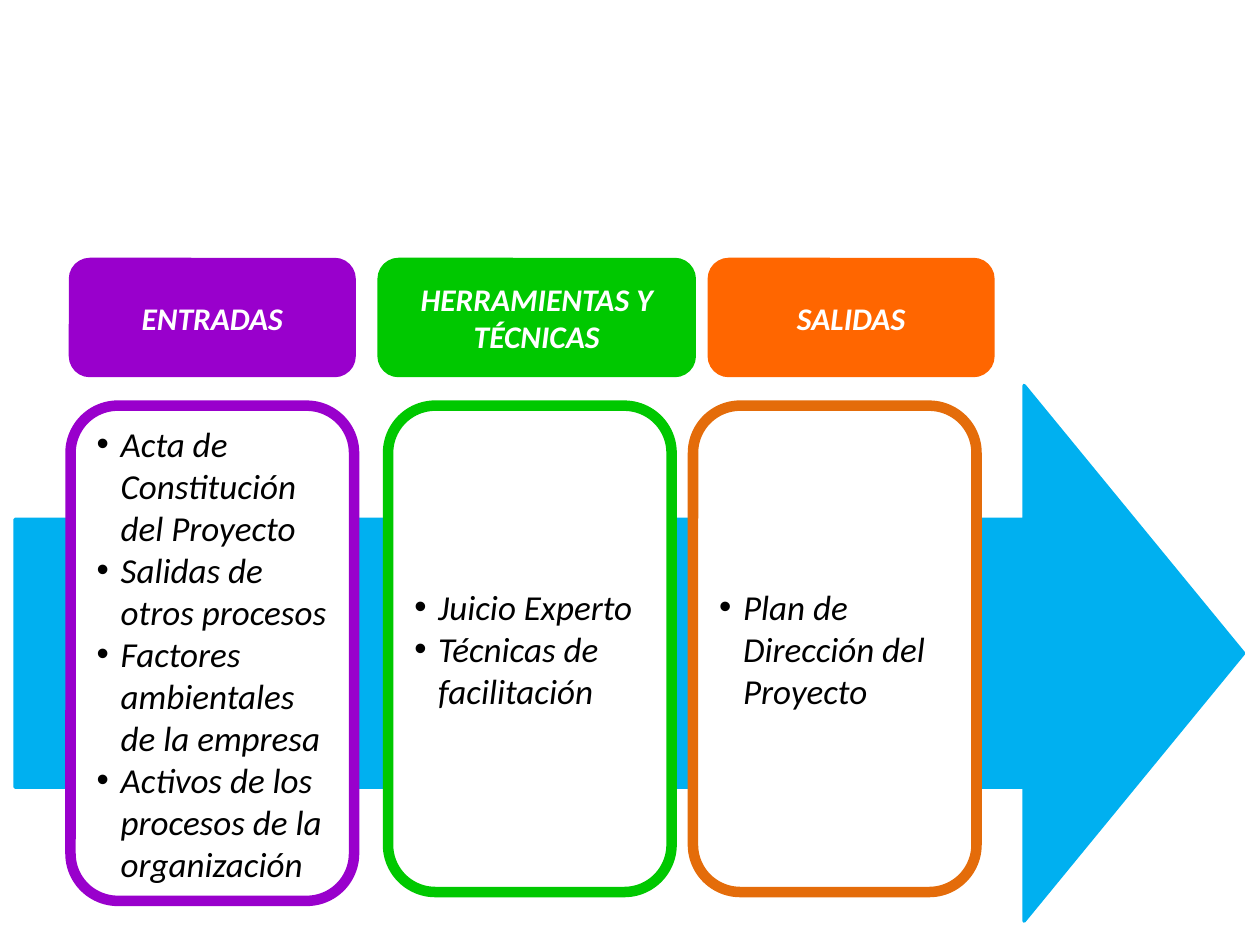
"""Build a process slide: inputs, tools and outputs on a wide arrow."""
from dataclasses import dataclass

from lxml.etree import SubElement
from pptx import Presentation
from pptx.dml.color import RGBColor
from pptx.enum.shapes import MSO_SHAPE as Shape
from pptx.enum.text import MSO_ANCHOR as Anchor, PP_ALIGN as Align
from pptx.oxml.ns import qn
from pptx.util import Inches, Pt

COLORS = {
    "arrow": "00B0F0",
    "purple": "9900CC",
    "green": "00C800",
    "orange": "FF6600",
    "brown": "E46C0A",
    "white": "FFFFFF",
    "black": "000000",
}
FONT = "Calibri"
COLUMNS, ROWS = 100, 75
HEADER_TOP, HEADER_HEIGHT = 20.6, 9.2
CARD_TOP, CARD_WIDTH = 32.2, 22.5
BULLET_INDENT = Inches(0.19)


@dataclass(frozen=True)
class Area:
    left: float
    top: float
    width: float
    height: float


@dataclass(frozen=True)
class Stage:
    title: str
    items: tuple[str, ...]
    header_color: str
    card_color: str
    header_left: float
    header_width: float
    card_left: float
    card_height: float


STAGES = (
    Stage("ENTRADAS",
          ("Acta de Constitución del Proyecto",
           "Salidas de otros procesos",
           "Factores ambientales de la empresa",
           "Activos de los procesos de la organización"),
          "purple", "purple", 5.6, 22.5, 5.6, 39.3),
    Stage("HERRAMIENTAS Y TÉCNICAS",
          ("Juicio Experto", "Técnicas de facilitación"),
          "green", "green", 30.1, 25, 30.8, 38.6),
    Stage("SALIDAS",
          ("Plan de Dirección del Proyecto",),
          "orange", "brown", 56.3, 22.5, 55, 38.6),
)


def rgb(name: str) -> RGBColor:
    return RGBColor.from_string(COLORS[name])


def add_block(deck, page, kind: Shape, area: Area, fill: str, line: str, weight: float):
    column, row = deck.slide_width / COLUMNS, deck.slide_height / ROWS
    block = page.shapes.add_shape(
        kind, round(area.left * column), round(area.top * row),
        round(area.width * column), round(area.height * row))
    block.shadow.inherit = False
    block.fill.solid()
    block.fill.fore_color.rgb = rgb(fill)
    block.line.color.rgb = rgb(line)
    block.line.width = Pt(weight)
    return block


def add_bullet(para) -> None:
    properties = para._p.get_or_add_pPr()
    properties.set("marL", str(BULLET_INDENT))
    properties.set("indent", str(-BULLET_INDENT))
    SubElement(properties, qn("a:buFont"), typeface="Arial")
    SubElement(properties, qn("a:buChar"), char="•")


def write(block, lines: tuple[str, ...], size: float, color: str,
          bold: bool = False, bulleted: bool = False) -> None:
    frame = block.text_frame
    frame.word_wrap = True
    frame.vertical_anchor = Anchor.MIDDLE
    for index, line in enumerate(lines):
        para = frame.add_paragraph() if index else frame.paragraphs[0]
        para.alignment = Align.LEFT if bulleted else Align.CENTER
        if bulleted:
            add_bullet(para)
        span = para.add_run()
        span.text = line
        span.font.name = FONT
        span.font.size = Pt(size)
        span.font.bold = bold
        span.font.italic = True
        span.font.color.rgb = rgb(color)


def add_stage(deck, page, stage: Stage) -> None:
    card_area = Area(stage.card_left, CARD_TOP, CARD_WIDTH, stage.card_height)
    card = add_block(deck, page, Shape.ROUNDED_RECTANGLE, card_area,
                     "white", stage.card_color, 6)
    write(card, stage.items, 20, "black", bulleted=True)
    header_area = Area(stage.header_left, HEADER_TOP, stage.header_width, HEADER_HEIGHT)
    header = add_block(deck, page, Shape.ROUNDED_RECTANGLE, header_area,
                       stage.header_color, stage.header_color, 2)
    write(header, (stage.title,), 18, "white", bold=True)


def main() -> None:
    deck = Presentation()
    deck.slide_width, deck.slide_height = Inches(10), Inches(7.5)
    page = deck.slides.add_slide(deck.slide_layouts[6])
    arrow = add_block(deck, page, Shape.RIGHT_ARROW, Area(1.2, 30.6, 97.5, 42.5),
                      "arrow", "arrow", 2)
    arrow.adjustments[0] = 0.5
    arrow.adjustments[1] = 0.41
    for stage in STAGES:
        add_stage(deck, page, stage)
    deck.save("out.pptx")


if __name__ == "__main__":
    main()
